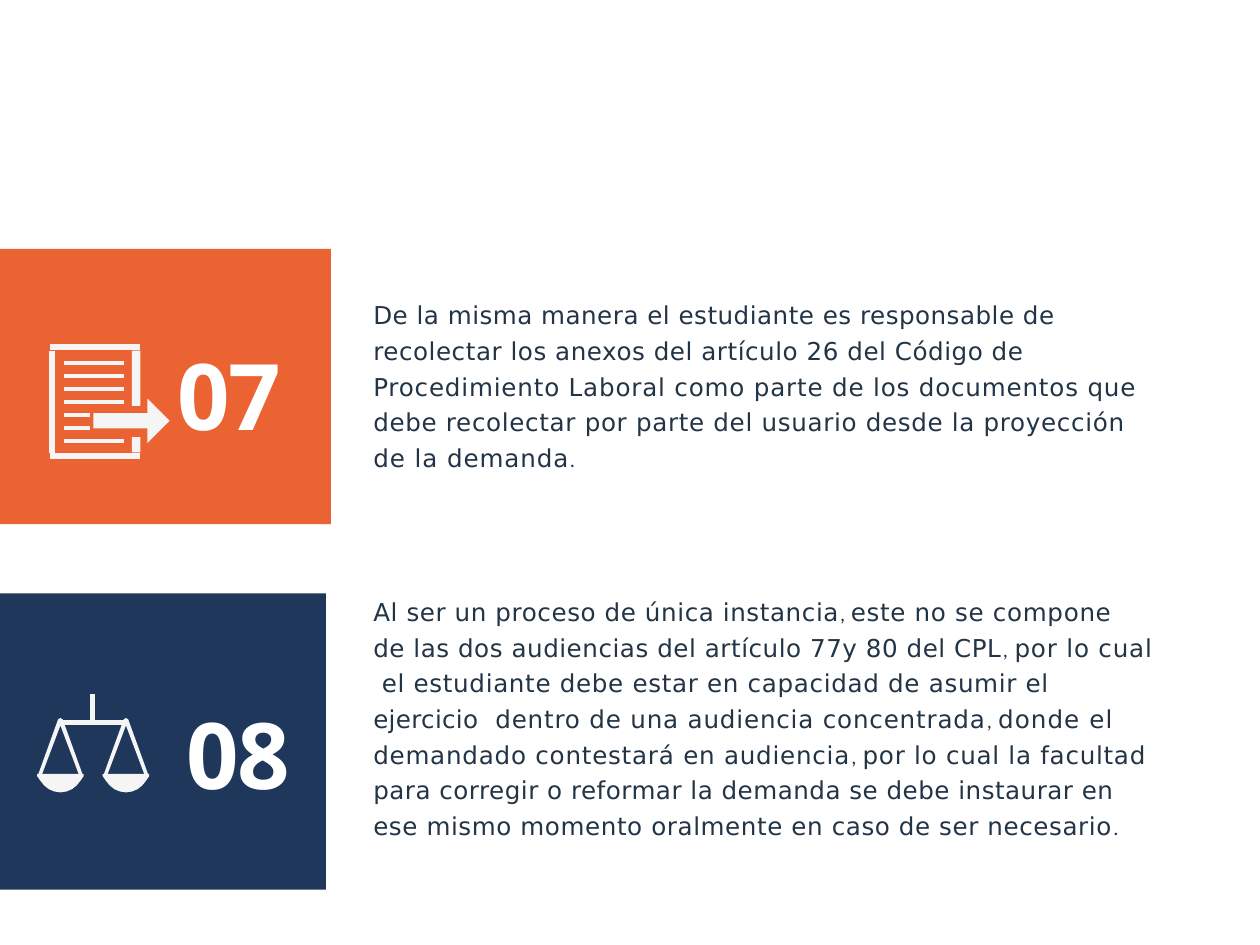
"""Build the slide with steps 07 and 08 of the labour claim procedure."""
import pptx
import pptx.dml.color
import pptx.enum.shapes
import pptx.oxml
import pptx.oxml.ns
import pptx.util

Cm = pptx.util.Cm
Pt = pptx.util.Pt
SHAPE = pptx.enum.shapes.MSO_SHAPE

COLORS = {"orange": "EB6333", "navy": "1F375B", "icon": "F5F5F5",
          "white": "FFFFFF", "text": "223446"}

STEP_07 = [
    [("De la misma manera el estudiante es responsable de", 0.31)],
    [("recolectar los anexos del artículo 26 del Código de", 0.34)],
    [("Procedimiento Laboral como parte de los documentos que", 0.51)],
    [("debe recolectar por parte del usuario desde la proyección", 0.42)],
    [("de la demanda", 0.58), (".", 0.7)],
]
STEP_08 = [
    [("Al ser un proceso de única instancia", 0.38), (", ", 0.3),
     ("este no se compone", 0.42)],
    [("de las dos audiencias del artículo 77y 80 del CPL", 0.33), (", ", 0.6),
     ("por lo cual", 0.5)],
    [(" el estudiante debe estar en capacidad de asumir el", 0.43)],
    [("ejercicio", 0.2), (" ", 5.4),
     ("dentro de una audiencia concentrada", 0.51), (", ", 0.5),
     ("donde el", 0.65)],
    [("demandado contestará en audiencia", 0.49), (", ", 0.5),
     ("por lo cual la facultad", 0.46)],
    [("para corregir o reformar la demanda se debe instaurar en", 0.31)],
    [("ese mismo momento oralmente en caso de ser necesario", 0.38), (".", 0.2)],
]


def rgb(name):
    """Return the named colour."""
    return pptx.dml.color.RGBColor.from_string(COLORS[name])


def add_text(p, text, size=15, font="DejaVu Sans", color="text", bold=False, spacing=0):
    """Add a formatted run to a paragraph."""
    r = p.add_run()
    r.text = text
    r.font.size = Pt(size)
    r.font.name = font
    r.font.bold = bold
    r.font.color.rgb = rgb(color)
    r.font.language_id = pptx.enum.lang.MSO_LANGUAGE_ID.SPANISH
    r._r.get_or_add_rPr().set("spc", str(round(spacing * 100)))


class Deck:
    """Hold the style and the current slide."""

    def __init__(self, slide, icon="icon"):
        """Keep the slide and the icon colour."""
        self.slide = slide
        self.icon = icon

    def paint(self, sp, color):
        """Give a shape a flat fill."""
        sp.shadow.inherit = False
        sp.fill.solid()
        sp.fill.fore_color.rgb = rgb(color)
        sp.line.fill.background()
        return sp

    def shape(self, kind, x, y, w, h, color):
        """Add a preset shape."""
        sp = self.slide.shapes.add_shape(kind, Cm(x), Cm(y), Cm(w), Cm(h))
        return self.paint(sp, color)

    def polygon(self, points):
        """Add a closed icon outline."""
        points = [(Cm(x), Cm(y)) for x, y in points]
        builder = self.slide.shapes.build_freeform(*points[0])
        builder.add_line_segments(points[1:], close=True)
        return self.paint(builder.convert_to_shape(), self.icon)

    def line(self, x1, y1, x2, y2, width):
        """Add a straight icon line."""
        sp = self.slide.shapes.add_connector(
            pptx.enum.shapes.MSO_CONNECTOR.STRAIGHT, Cm(x1), Cm(y1), Cm(x2), Cm(y2))
        sp.line.color.rgb = rgb(self.icon)
        sp.line.width = Pt(width)
        sp._element.spPr.append(pptx.oxml.parse_xml(
            "<a:effectLst %s/>" % pptx.oxml.ns.nsdecls("a")))

    def text_box(self, x, y, w, h):
        """Add a text box without margins and return its paragraph."""
        tf = self.slide.shapes.add_textbox(Cm(x), Cm(y), Cm(w), Cm(h)).text_frame
        tf.margin_left = tf.margin_right = tf.margin_top = tf.margin_bottom = 0
        tf.word_wrap = True
        return tf.paragraphs[0]

    def number(self, text, x, y):
        """Add a large step number."""
        add_text(self.text_box(x, y, 2.8, 2.39), text, size=56, font="Open Sans",
                 color="white", bold=True, spacing=-0.6)

    def body(self, lines, x, y, w, h):
        """Add a step description line by line."""
        p = self.text_box(x, y, w, h)
        p.line_spacing = 1.21
        for i, line in enumerate(lines):
            if i:
                p.add_line_break()
            for text, spacing in line:
                if text in (", ", "."):
                    add_text(p, text, size=12.5, font="Calibri", spacing=spacing)
                else:
                    add_text(p, text, spacing=spacing)

    def document_icon(self):
        """Draw a page with an arrow leaving it."""
        for i in range(7):
            end = 1.93 if i in (4, 5) else 2.67
            y = 7.8 + 0.28 * i
            self.line(1.37, y, end, y, 2.63)
        arrow = self.shape(SHAPE.RIGHT_ARROW, 2.01, 8.57, 1.64, 0.96, self.icon)
        arrow.adjustments[0] = 0.34
        arrow.adjustments[1] = 0.5
        for y in (7.47, 9.8):
            self.line(1.07, y, 3.02, y, 3.75)
        self.line(1.12, 7.54, 1.12, 9.73, 3.75)
        for y, h in ((7.54, 1.19), (9.4, 0.33)):
            self.shape(SHAPE.RECTANGLE, 2.84, y, 0.18, h, self.icon)

    def scales_icon(self):
        """Draw a pair of scales."""
        left, right = 1.3, 2.71
        self.line(left, 15.53, right, 15.53, 2.83)
        self.line(1.99, 14.93, 1.99, 15.53, 2.83)
        arms = [(-0.41, 16.69), (-0.48, 16.66), (-0.05, 15.47), (0, 15.44),
                (0.05, 15.47), (0.48, 16.66), (0.41, 16.69), (0, 15.6)]
        half = [(0.5, 16.64), (0.5, 16.69), (0.43, 16.79), (0.35, 16.89),
                (0.25, 16.97), (0.13, 17.02), (0, 17.04)]
        bowl = half + [(-x, y) for x, y in reversed(half[:-1])]
        for center in (left, right):
            for outline in (arms, bowl):
                self.polygon([(center + x, y) for x, y in outline])


def main():
    """Build and save the presentation."""
    prs = pptx.Presentation()
    prs.slide_width, prs.slide_height = Cm(27.1), Cm(20.32)
    deck = Deck(prs.slides.add_slide(prs.slide_layouts[6]))
    deck.shape(SHAPE.RECTANGLE, 0, 5.35, 7.12, 5.92, "orange")
    deck.number("07", 3.81, 7.29)
    deck.shape(SHAPE.RECTANGLE, 0, 12.76, 7.01, 6.37, "navy")
    deck.number("08", 4.01, 15.01)
    deck.body(STEP_07, 8.03, 6.32, 16.71, 4.32)
    deck.body(STEP_08, 8.03, 12.7, 17.2, 5.92)
    deck.document_icon()
    deck.scales_icon()
    prs.save("out.pptx")


if __name__ == "__main__":
    import pptx.enum.lang
    main()
